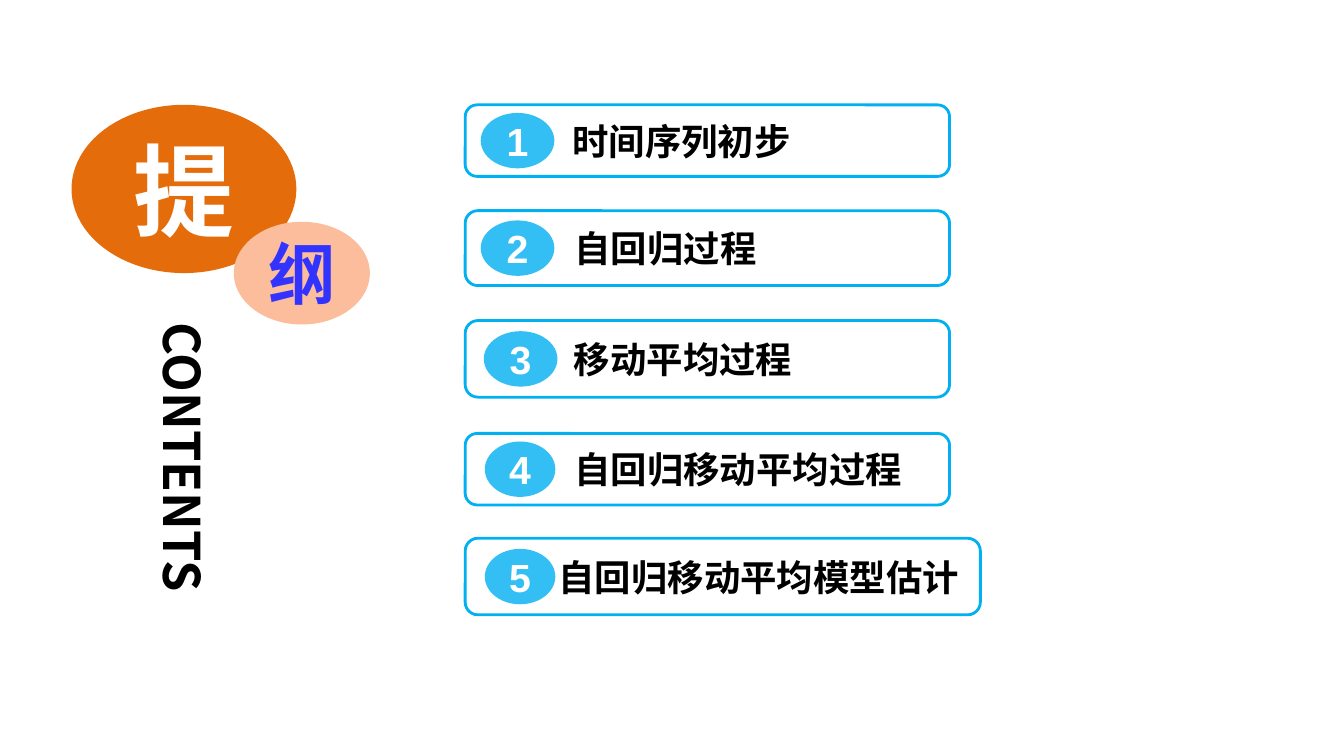
from pptx import Presentation
from pptx.dml.color import RGBColor
from pptx.enum.shapes import MSO_SHAPE
from pptx.enum.text import MSO_ANCHOR, MSO_AUTO_SIZE, PP_ALIGN
from pptx.oxml.ns import qn
from pptx.util import Pt
from lxml import etree

OVAL, ROUNDED = MSO_SHAPE.OVAL, MSO_SHAPE.ROUNDED_RECTANGLE
MIDDLE, NO_FIT = MSO_ANCHOR.MIDDLE, MSO_AUTO_SIZE.NONE
LEFT, CENTER = PP_ALIGN.LEFT, PP_ALIGN.CENTER
CJK_FONT, NUMBER_FONT = "Noto Sans CJK SC", "Arial"
BLACK, WHITE, SKY = "000000", "FFFFFF", "00B0F0"

ROW_LEFT, BADGE_HEIGHT = 332.3, 39.6
# text, top, width, height, text inset, badge left, badge width
TOPICS = [
    ("时间序列初步", 74.9, 346, 51.1, 74, 343.4, 52.6),
    ("自回归过程", 150.5, 346, 53.5, 75.5, 343.4, 52.6),
    ("移动平均过程", 229, 346, 54.7, 75, 345.6, 52.6),
    ("自回归移动平均过程", 309.6, 346, 51.1, 75.5, 346.3, 50.4),
    ("自回归移动平均模型估计", 384.5, 368, 54.7, 64, 346.3, 50.4),
]


def rgb(hex_code):
    return RGBColor.from_string(hex_code)


def write(shape, text, size, color, font=CJK_FONT, align=CENTER, **frame_format):
    frame = shape.text_frame
    frame_values = {"vertical_anchor": MIDDLE, "auto_size": NO_FIT,
                    "word_wrap": True, **frame_format}
    for name, value in frame_values.items():
        setattr(frame, name, value)
    paragraph = frame.paragraphs[0]
    paragraph.alignment = align
    run = paragraph.add_run()
    run.text = text
    for name, value in {"name": font, "size": Pt(size), "bold": True}.items():
        setattr(run.font, name, value)
    run.font.color.rgb = rgb(color)
    east_asian = etree.SubElement(run.font._element, qn("a:ea"))
    east_asian.set("typeface", font)


def add_filled(slide, kind, box, fill, line=None, opacity=None):
    shape = slide.shapes.add_shape(kind, *map(Pt, box))
    shape.shadow.inherit = False
    shape.fill.solid()
    shape.fill.fore_color.rgb = rgb(fill)
    if opacity:
        fill_color = shape.fill._xPr.find(qn("a:solidFill"))[0]
        etree.SubElement(fill_color, qn("a:alpha")).set("val", str(opacity * 1000))
    if line:
        shape.line.color.rgb = rgb(line)
        shape.line.width = Pt(2)
    else:
        shape.line.fill.background()
    return shape


def add_topic(slide, number, topic):
    text, top, width, height, inset, badge_left, badge_width = topic
    row = add_filled(slide, ROUNDED, (ROW_LEFT, top, width, height), WHITE, line=SKY)
    write(row, text, 26, BLACK, align=LEFT, margin_left=Pt(inset))
    badge_top = top + (height - BADGE_HEIGHT) / 2
    badge = add_filled(slide, OVAL, (badge_left, badge_top, badge_width, BADGE_HEIGHT),
                       SKY, opacity=80)
    write(badge, str(number), 28, WHITE, NUMBER_FONT, word_wrap=False)


def add_heading_oval(slide, character, box, fill, size, color):
    oval = add_filled(slide, OVAL, box, fill)
    write(oval, character, size, color, **NO_MARGINS)


def place_vertical_title(slide, text):
    title = slide.shapes.title
    position = {"left": 99.4, "top": 230.4, "width": 64, "height": 216}
    for name, value in position.items():
        setattr(title, name, Pt(value))
    write(title, text, 36, BLACK, align=LEFT, **NO_MARGINS)
    title.text_frame._txBody.bodyPr.set("vert", "eaVert")


NO_MARGINS = dict.fromkeys(
    ("margin_left", "margin_top", "margin_right", "margin_bottom"), 0)


def main():
    deck = Presentation()
    deck.slide_width, deck.slide_height = Pt(960), Pt(540)
    slide = deck.slides.add_slide(deck.slide_layouts[5])
    place_vertical_title(slide, "CONTENTS")
    for number, topic in enumerate(TOPICS, start=1):
        add_topic(slide, number, topic)
    add_heading_oval(slide, "提", (51.1, 74.9, 160.6, 120.2), "E46C0A", 72, WHITE)
    add_heading_oval(slide, "纲", (167, 158.4, 97.2, 73.4), "FBBD9B", 48, "3333FF")
    deck.save("out.pptx")


if __name__ == "__main__":
    main()
